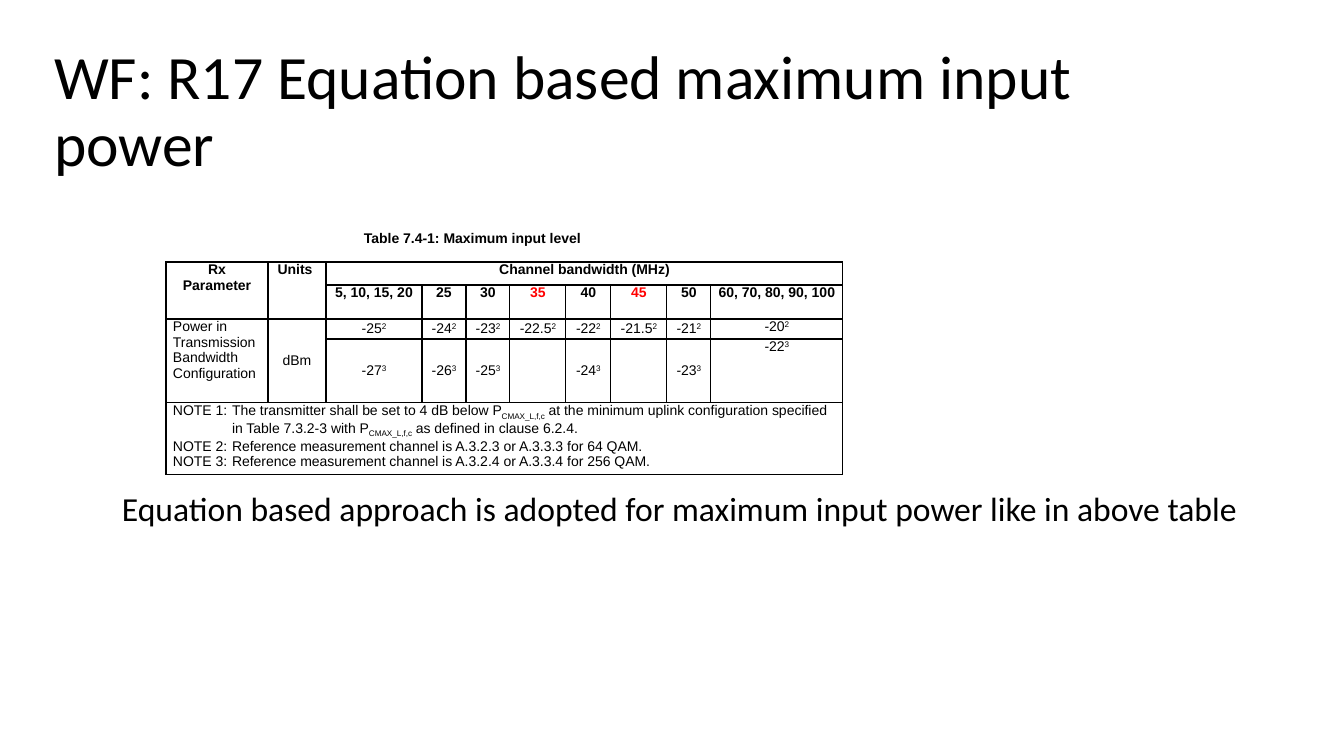
from lxml.etree import SubElement
from pptx import Presentation
from pptx.dml.color import RGBColor
from pptx.enum.text import MSO_ANCHOR, PP_ALIGN
from pptx.oxml.ns import qn
from pptx.util import Pt

PX = 9071  # EMU per px
COLS = [102, 58, 96, 44, 44, 56, 45, 56, 44, 132]
ROWS = [23, 34, 20, 64, 72]
BANDS = ["5, 10, 15, 20", "25", "30", "35", "40", "45", "50",
         "60, 70, 80, 90, 100"]
NEW = {"35", "45"}
LEVELS = [
    ("2", ["-25", "-24", "-23", "-22.5", "-22", "-21.5", "-21", "-20"]),
    ("3", ["-27", "-26", "-25", "", "-24", "", "-23", "-22"]),
]
LIMIT = ("CMAX_L,f,c", -25)
NOTES = [
    [("NOTE 1:\tThe transmitter shall be set to 4 dB below P", 0), LIMIT,
     (" at the minimum uplink configuration specified in Table 7.3.2-3 "
      "with P", 0), LIMIT, (" as defined in clause 6.2.4.", 0)],
    [("NOTE 2:\tReference measurement channel is A.3.2.3 or A.3.3.3 "
      "for 64 QAM.", 0)],
    [("NOTE 3:\tReference measurement channel is A.3.2.4 or A.3.3.4 "
      "for 256 QAM.", 0)],
]


def paint(color, hue):
    color.rgb = RGBColor.from_string(hue)


def write(para, text, size=10, face="Arial", bold=False, hue="000000", base=0):
    """Add one run; base is its shift from the baseline in percent."""
    run = para.add_run()
    run.text = text
    font = run.font
    font.size, font.name, font.bold = Pt(size), face, bold
    paint(font.color, hue)
    if base:
        run._r.get_or_add_rPr().set("baseline", str(base * 1000))


def add_title(slide, box, text):
    title = slide.shapes.title
    title.left, title.top, title.width, title.height = [n * PX for n in box]
    frame = title.text_frame
    frame.word_wrap = True
    frame.vertical_anchor = MSO_ANCHOR.MIDDLE
    para = frame.paragraphs[0]
    para.alignment = PP_ALIGN.LEFT
    para.line_spacing = 0.9
    write(para, text, 44, "Calibri")


def add_label(slide, box, text, anchor=MSO_ANCHOR.TOP, **style):
    frame = slide.shapes.add_textbox(*[n * PX for n in box]).text_frame
    frame.word_wrap = True
    frame.vertical_anchor = anchor
    write(frame.paragraphs[0], text, **style)


def frame_cell(cell):
    """Clear the fill, tighten the margins and draw the four borders."""
    cell.margin_left = cell.margin_right = 7 * PX
    cell.margin_top = cell.margin_bottom = 0
    props = cell._tc.get_or_add_tcPr()
    for side in ("a:lnL", "a:lnR", "a:lnT", "a:lnB"):
        line = SubElement(props, qn(side), w=str(Pt(1)))
        fill = SubElement(line, qn("a:solidFill"))
        SubElement(fill, qn("a:srgbClr"), val="000000")
    cell.fill.background()


def fill_cell(cell, runs, mid=False, align=PP_ALIGN.CENTER, **style):
    cell.vertical_anchor = MSO_ANCHOR.MIDDLE if mid else MSO_ANCHOR.TOP
    para = cell.text_frame.paragraphs[0]
    para.alignment = align
    for text, base in runs:
        write(para, text, base=base, **style)


def add_notes(cell):
    frame = cell.text_frame
    for i, runs in enumerate(NOTES):
        para = frame.add_paragraph() if i else frame.paragraphs[0]
        props = para._p.get_or_add_pPr()
        props.set("marL", str(59 * PX))
        props.set("indent", str(-59 * PX))
        for text, base in runs:
            write(para, text, base=base)


def add_levels(slide, left, top):
    """Place the table of input levels at the given corner."""
    table = slide.shapes.add_table(
        len(ROWS), len(COLS), left * PX, top * PX,
        sum(COLS) * PX, sum(ROWS) * PX).table
    table.first_row = table.horz_banding = False
    for col, width in zip(table.columns, COLS):
        col.width = width * PX
    for row, height in zip(table.rows, ROWS):
        row.height = height * PX
    for cell in table.iter_cells():
        frame_cell(cell)

    cell = table.cell
    for start, end in [((0, 0), (1, 0)), ((0, 1), (1, 1)), ((0, 2), (0, 9)),
                       ((2, 0), (3, 0)), ((2, 1), (3, 1)), ((4, 0), (4, 9))]:
        cell(*start).merge(cell(*end))

    for c, head in enumerate(["Rx Parameter", "Units ",
                              "Channel bandwidth (MHz)"]):
        fill_cell(cell(0, c), [(head, 0)], bold=True)
    for c, band in enumerate(BANDS, 2):
        hue = "FF0000" if band in NEW else "000000"
        fill_cell(cell(1, c), [(band, 0)], bold=True, hue=hue)
    fill_cell(cell(2, 0), [("Power in Transmission Bandwidth Configuration", 0)],
              align=PP_ALIGN.LEFT)
    fill_cell(cell(2, 1), [("dBm", 0)], mid=True)
    last = len(COLS) - 1
    for r, (note, levels) in enumerate(LEVELS, 2):
        for c, level in enumerate(levels, 2):
            if level:
                fill_cell(cell(r, c), [(level, 0), (note, 30)], mid=c < last)
    add_notes(cell(4, 0))

    for item in table.iter_cells():
        if not item.text:
            para = item.text_frame.paragraphs[0]
            SubElement(para._p, qn("a:endParaRPr"), sz="1000")


def main():
    deck = Presentation()
    deck.slide_width, deck.slide_height = 1344 * PX, 756 * PX
    slide = deck.slides.add_slide(deck.slide_layouts[5])
    add_title(slide, (44, 40, 1207, 146),
              "WF: R17 Equation based maximum input power")
    add_label(slide, (112, 483, 1157, 50),
              "Equation based approach is adopted for maximum input power "
              "like in above table", size=24, face="Calibri")
    add_levels(slide, 166, 262)
    add_label(slide, (354, 224, 420, 27), "Table 7.4-1: Maximum input level",
              MSO_ANCHOR.MIDDLE, bold=True)
    deck.save("out.pptx")


if __name__ == "__main__":
    main()
